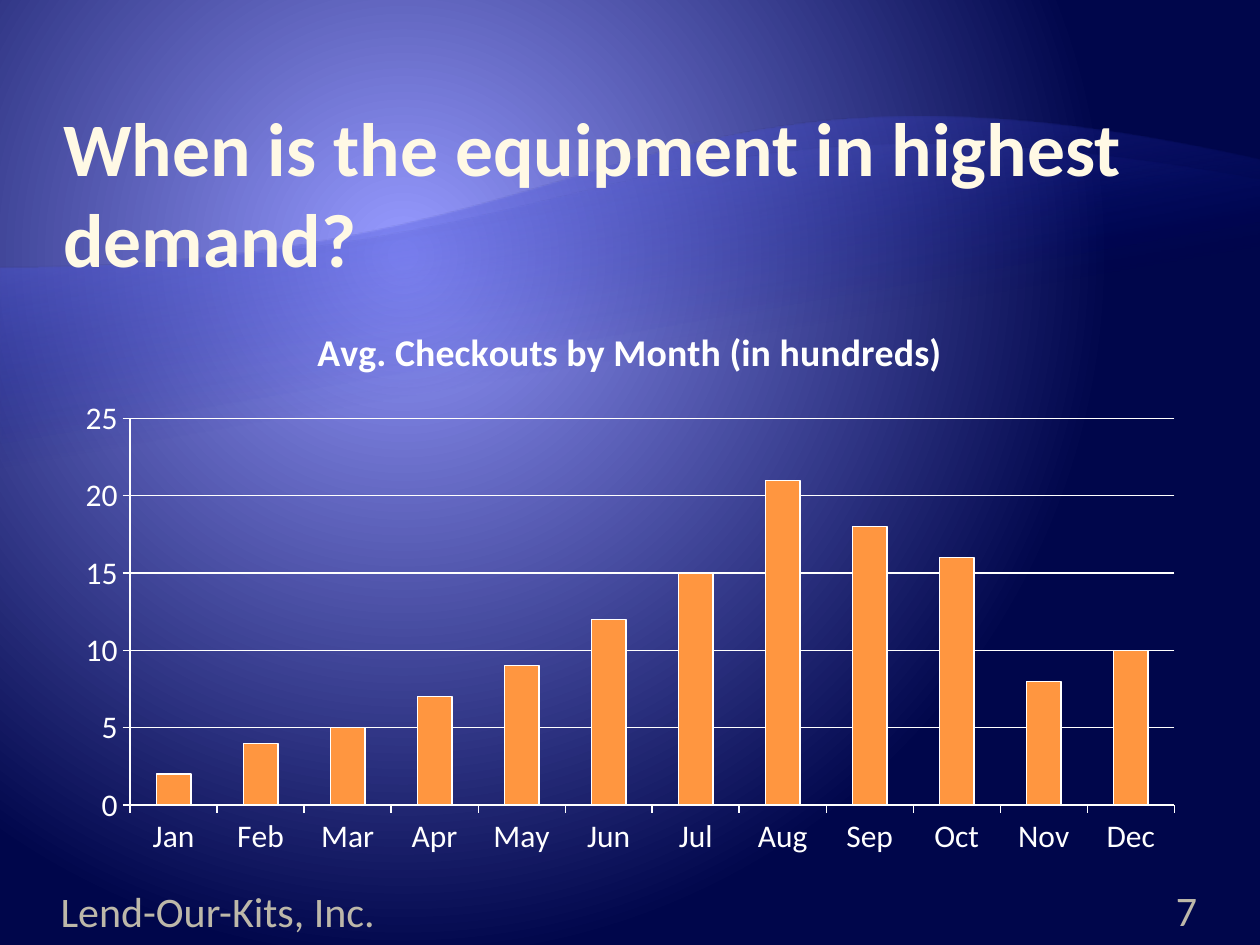
from lxml import etree
from pptx import Presentation
from pptx.chart.data import CategoryChartData
from pptx.dml.color import RGBColor
from pptx.enum.chart import XL_CHART_TYPE, XL_TICK_MARK
from pptx.enum.shapes import MSO_SHAPE
from pptx.enum.text import MSO_ANCHOR, PP_ALIGN
from pptx.oxml.ns import qn
from pptx.util import Pt

COLUMNS = XL_CHART_TYPE.COLUMN_CLUSTERED
TICK_OUT = XL_TICK_MARK.OUTSIDE
WAVE = MSO_SHAPE.FLOWCHART_DOCUMENT
BOTTOM = MSO_ANCHOR.BOTTOM
LEFT, RIGHT = PP_ALIGN.LEFT, PP_ALIGN.RIGHT

FONT = "Calibri"
COLORS = {
    "glow": "969AFF", "navy": "00064B", "wave": "000D9E",
    "wave_back": "797FFF", "wave_front": "A3A7FF",
    "title": "FFF9E5", "footer": "BDB8A9", "chart": "FFFFFF", "bar": "FF9640",
}


def rgb(name):
    return RGBColor.from_string(COLORS[name])


def set_gradient(fill, root, stops, angle=None):
    """Stops are (position %, colour, opacity %); no angle means a radial glow."""
    fill.gradient()
    grad = root.find(".//" + qn("a:gradFill"))
    for child in list(grad):
        grad.remove(child)
    stop_list = etree.SubElement(grad, qn("a:gsLst"))
    for pos, name, opacity in stops:
        gs = etree.SubElement(stop_list, qn("a:gs"), pos=str(pos * 1000))
        color = etree.SubElement(gs, qn("a:srgbClr"), val=COLORS[name])
        if opacity < 100:
            etree.SubElement(color, qn("a:alpha"), val=str(opacity * 1000))
    if angle is None:
        circle = etree.SubElement(grad, qn("a:path"), path="circle")
        etree.SubElement(circle, qn("a:fillToRect"),
                         l="100000", t="100000", r="135000", b="145000")
    else:
        etree.SubElement(grad, qn("a:lin"), ang=str(angle * 60000), scaled="0")


prs = Presentation()
prs.slide_width, prs.slide_height = Pt(720), Pt(540)
s = prs.slides.add_slide(prs.slide_layouts[5])

# Background glow
set_gradient(s.background.fill, s.element,
             [(0, "glow", 100), (1, "glow", 100), (90, "navy", 100)])

# Waves, placed behind the title
waves = [(60.5, 467.3, "wave_back", 55), (77.8, 380.2, "wave_front", 30)]
for i, (top, height, name, opacity) in enumerate(waves):
    sp = s.shapes.add_shape(WAVE, 0, Pt(top), Pt(720), Pt(height))
    sp.rotation = 180
    sp.shadow.inherit = False
    sp.line.fill.background()
    set_gradient(sp.fill, sp.element, [(65, "wave", 0), (100, name, opacity)], 80)
    s.shapes.element.insert(2 + i, sp.element)

# Title
title = s.shapes.title
title.left, title.top, title.width, title.height = Pt(36), Pt(72), Pt(648), Pt(90)
tf = title.text_frame
tf.text = "When is the equipment in highest demand?"
tf.word_wrap = True
tf.vertical_anchor = BOTTOM
tf.margin_left = tf.margin_right = 0
tf.margin_top = tf.margin_bottom = Pt(0.7)
p = tf.paragraphs[0]
p.alignment = LEFT
p.font.name, p.font.size, p.font.bold = FONT, Pt(43.2), True
p.font.color.rgb = rgb("title")

# Footer and slide number
footers = [
    ("Lend-Our-Kits, Inc.", 34.6, 509.8, 228.2, LEFT, 0, 7.2),
    ("7", 642.2, 509, 41.8, RIGHT, 7.2, 0),
]
for text, left, top, width, align, inset_left, inset_right in footers:
    tf = s.shapes.add_textbox(Pt(left), Pt(top), Pt(width), Pt(28.8)).text_frame
    tf.text = text
    tf.word_wrap = True
    tf.vertical_anchor = BOTTOM
    tf.margin_left, tf.margin_right = Pt(inset_left), Pt(inset_right)
    p = tf.paragraphs[0]
    p.alignment = align
    p.font.name, p.font.size = FONT, Pt(24)
    p.font.color.rgb = rgb("footer")

# Checkouts chart
data = CategoryChartData()
data.categories = ["Jan", "Feb", "Mar", "Apr", "May", "Jun",
                   "Jul", "Aug", "Sep", "Oct", "Nov", "Dec"]
data.add_series("Series 1", [2, 4, 5, 7, 9, 12, 15, 21, 18, 16, 8, 10])
chart = s.shapes.add_chart(COLUMNS, Pt(36), Pt(171.4), Pt(648), Pt(324), data).chart
chart.font.name, chart.font.size = FONT, Pt(18)
chart.font.color.rgb = rgb("chart")
chart.has_legend = False

tf = chart.chart_title.text_frame
tf.text = "Avg. Checkouts by Month (in hundreds)"
p = tf.paragraphs[0]
p.font.name, p.font.size, p.font.bold = FONT, Pt(21.6), True
p.font.color.rgb = rgb("chart")

plot = chart.plots[0]
plot.gap_width = 150
plot.vary_by_categories = False
bars = plot.series[0].format
bars.fill.solid()
bars.fill.fore_color.rgb = rgb("bar")

# Axes, gridlines and bar outlines share one thin line
value_axis, category_axis = chart.value_axis, chart.category_axis
value_axis.minimum_scale, value_axis.maximum_scale = 0, 25
value_axis.major_unit = 5
value_axis.has_major_gridlines = True
for axis in (value_axis, category_axis):
    axis.major_tick_mark = TICK_OUT
for part in (bars, value_axis.format, category_axis.format,
             value_axis.major_gridlines.format):
    part.line.width = Pt(0.75)
    part.line.color.rgb = rgb("chart")

prs.save("out.pptx")
